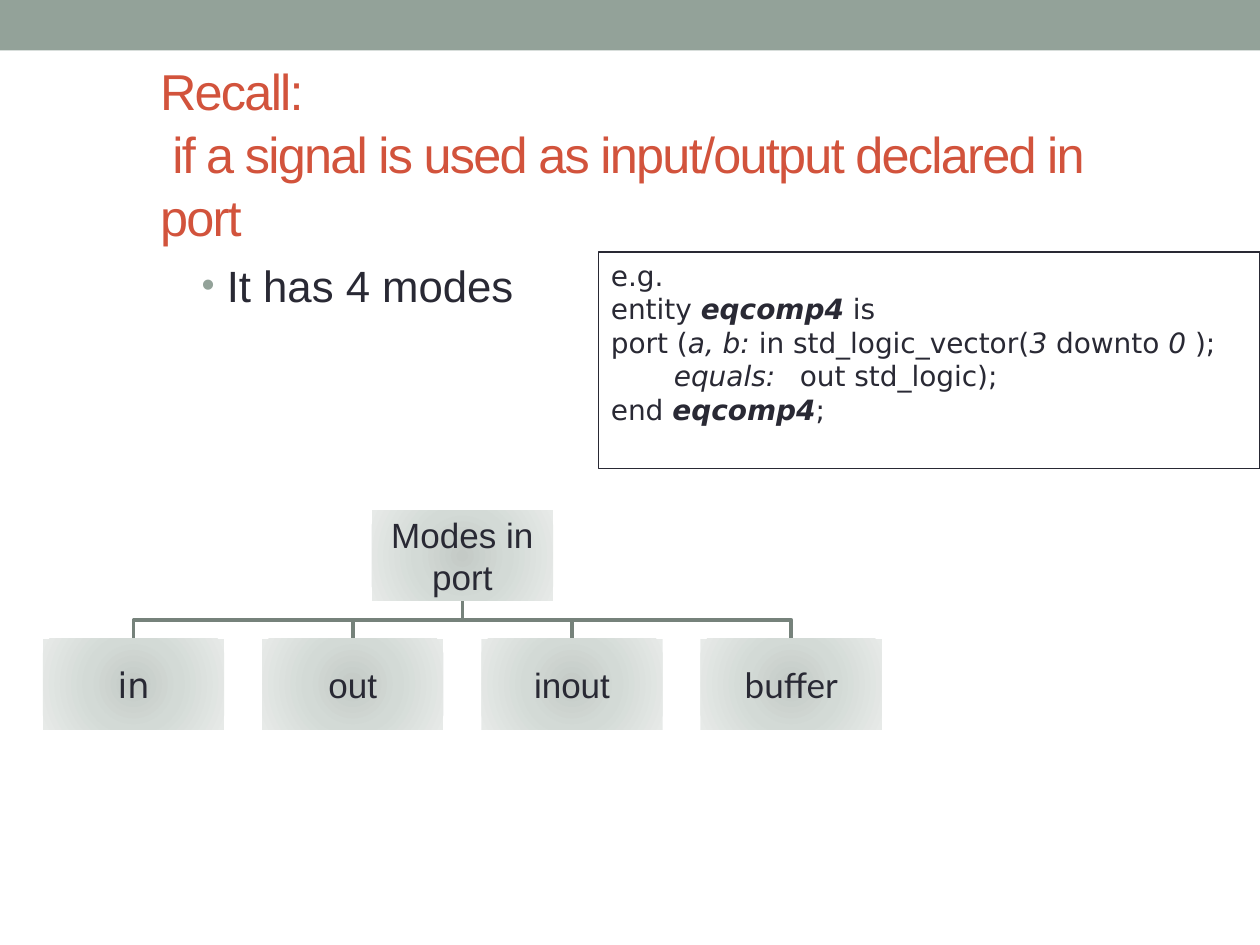
import pptx
import pptx.util
import pptx.dml.color
import pptx.enum.shapes
import pptx.enum.text
import pptx.oxml
import pptx.oxml.ns

Inches, Pt = pptx.util.Inches, pptx.util.Pt
ANCHOR, ALIGN = pptx.enum.text.MSO_ANCHOR, pptx.enum.text.PP_ALIGN
RECTANGLE = pptx.enum.shapes.MSO_SHAPE.RECTANGLE

TITLE = ["Recall:", " if a signal is used as input/output declared in port"]
BULLET = "It has 4 modes"
ITALIC, STRONG = {"italic": True}, {"bold": True, "italic": True}
CODE = [
    [("e.g.", {})],
    [("entity ", {}), ("eqcomp4", STRONG), (" is", {})],
    [("port (", {}), ("a, b:", ITALIC), (" in std_logic_vector(", {}), ("3", ITALIC),
     (" downto ", {}), ("0 ", ITALIC), (");", {})],
    [("\t", {}), ("equals:\t", ITALIC), ("out std_logic);", {})],
    [("end ", {}), ("eqcomp4", STRONG), (";", {})],
]
ROOT = ("Modes in port", "Arial")
MODES = [("in", "DejaVu Sans"), ("out", "Arial"), ("inout", "Arial"), ("buffer", "Lato")]

THEME = {
    "accent": "93A299", "title": "D2533C", "text": "292934", "branch": "76827B",
    "gradient": [(0, "C4CAC6"), (45, "D3DAD6"), (100, "E7EAE8")],
    "title_size": 28.8, "body_size": 25, "node_size": 20, "code_size": 16,
}
WIDTH, HEIGHT = 10, 7.5
TREE = {"left": 0.34, "top": 4.05, "column": 1.74, "row": 1.02, "width": 1.44, "height": 0.72}


def color(name):
    return pptx.dml.color.RGBColor.from_string(THEME[name])


def style(font, size, name="Arial", ink="text", **formats):
    values = {"size": Pt(THEME[size]), "name": name, **formats}
    for key, value in values.items():
        setattr(font, key, value)
    font.color.rgb = color(ink)


def place(box, left, top, width, height):
    values = {"left": left, "top": top, "width": width, "height": height}
    for key, value in values.items():
        setattr(box, key, Inches(value))


def set_frame(frame, **formats):
    values = {"word_wrap": True, "auto_size": pptx.enum.text.MSO_AUTO_SIZE.NONE, **formats}
    for key, value in values.items():
        setattr(frame, key, value)


def add_rectangle(page, left, top, width, height):
    box = page.shapes.add_shape(RECTANGLE, *map(Inches, (left, top, width, height)))
    box.shadow.inherit = False
    box.line.fill.background()
    return box


def add_bar(page):
    bar = add_rectangle(page, 0, 0, WIDTH, 0.4)
    bar.fill.solid()
    bar.fill.fore_color.rgb = color("accent")


def fill_title(page):
    box = page.shapes.title
    place(box, 1.17, 0.58, 0.8 * WIDTH, HEIGHT / 6)
    set_frame(box.text_frame, vertical_anchor=ANCHOR.MIDDLE)
    para = box.text_frame.paragraphs[0]
    para.alignment, para.line_spacing = ALIGN.LEFT, 1.05
    for index, line in enumerate(TITLE):
        if index:
            para.add_line_break()
        span = para.add_run()
        span.text = line
        style(span.font, "title_size", ink="title")
        span.font._element.set("spc", "-100")


def fill_body(page):
    box = page.placeholders[1]
    place(box, 1.5, 2, 3.91, 0.6 * HEIGHT)
    set_frame(box.text_frame, vertical_anchor=ANCHOR.TOP)
    para = box.text_frame.paragraphs[0]
    para.text = BULLET
    para.space_before = Pt(0)
    properties = para._p.get_or_add_pPr()
    properties.set("marL", str(Inches(0.2)))
    properties.set("indent", str(Inches(-0.2)))
    namespace = pptx.oxml.ns.nsdecls("a")
    for bullet in (
        f'<a:buClr {namespace}><a:srgbClr val="{THEME["accent"]}"/></a:buClr>',
        f'<a:buSzPct {namespace} val="85000"/>',
        f'<a:buFont {namespace} typeface="Arial"/>',
        f'<a:buChar {namespace} char="•"/>',
    ):
        properties.append(pptx.oxml.parse_xml(bullet))
    style(para.runs[0].font, "body_size")


def add_code(page):
    box = add_rectangle(page, 4.75, 2, WIDTH - 4.75, 1.72)
    box.fill.background()
    box.line.color.rgb = color("text")
    box.line.width = Pt(0.75)
    set_frame(box.text_frame, vertical_anchor=ANCHOR.TOP)
    for index, line in enumerate(CODE):
        para = box.text_frame.add_paragraph() if index else box.text_frame.paragraphs[0]
        para.alignment = ALIGN.LEFT
        for text, formats in line:
            span = para.add_run()
            span.text = text
            style(span.font, "code_size", "DejaVu Sans", **formats)


def fill_gradient(box):
    stops = "".join(f'<a:gs pos="{share * 1000}"><a:srgbClr val="{value}"/></a:gs>'
                    for share, value in THEME["gradient"])
    box.fill.gradient()
    properties = box._element.spPr
    properties.replace(properties.find(pptx.oxml.ns.qn("a:gradFill")), pptx.oxml.parse_xml(
        f'<a:gradFill {pptx.oxml.ns.nsdecls("a")} rotWithShape="1"><a:gsLst>{stops}</a:gsLst>'
        '<a:path path="circle"><a:fillToRect l="100000" t="100000" r="100000" b="100000"/>'
        '</a:path></a:gradFill>'))


def node_corner(column, row):
    return TREE["left"] + column * TREE["column"], TREE["top"] + row * TREE["row"]


def add_node(page, label, font_name, column, row):
    box = add_rectangle(page, *node_corner(column, row), TREE["width"], TREE["height"])
    fill_gradient(box)
    margins = {f"margin_{side}": Inches(0.01) for side in ("left", "top", "right", "bottom")}
    set_frame(box.text_frame, vertical_anchor=ANCHOR.MIDDLE, **margins)
    para = box.text_frame.paragraphs[0]
    para.text = label
    para.alignment = ALIGN.CENTER
    style(para.runs[0].font, "node_size", font_name)


def add_branch(page, root_column, column):
    root_left, root_top = node_corner(root_column, 0)
    left, bottom = node_corner(column, 1)
    start, end = root_left + TREE["width"] / 2, left + TREE["width"] / 2
    top = root_top + TREE["height"]
    middle = (top + bottom) / 2
    builder = page.shapes.build_freeform(Inches(start), Inches(top))
    points = [(start, middle), (end, middle), (end, bottom)]
    builder.add_line_segments([(Inches(x), Inches(y)) for x, y in points], close=False)
    branch = builder.convert_to_shape()
    branch.shadow.inherit = False
    branch.fill.background()
    branch.line.color.rgb = color("branch")
    branch.line.width = Pt(2.08)


def add_tree(page):
    root_column = (len(MODES) - 1) / 2
    for column in range(len(MODES)):
        add_branch(page, root_column, column)
    add_node(page, *ROOT, root_column, 0)
    for column, mode in enumerate(MODES):
        add_node(page, *mode, column, 1)


def main():
    deck = pptx.Presentation()
    deck.slide_width, deck.slide_height = Inches(WIDTH), Inches(HEIGHT)
    page = deck.slides.add_slide(deck.slide_layouts[1])
    for build in (add_bar, fill_title, fill_body, add_tree, add_code):
        build(page)
    deck.save("out.pptx")


if __name__ == "__main__":
    main()
